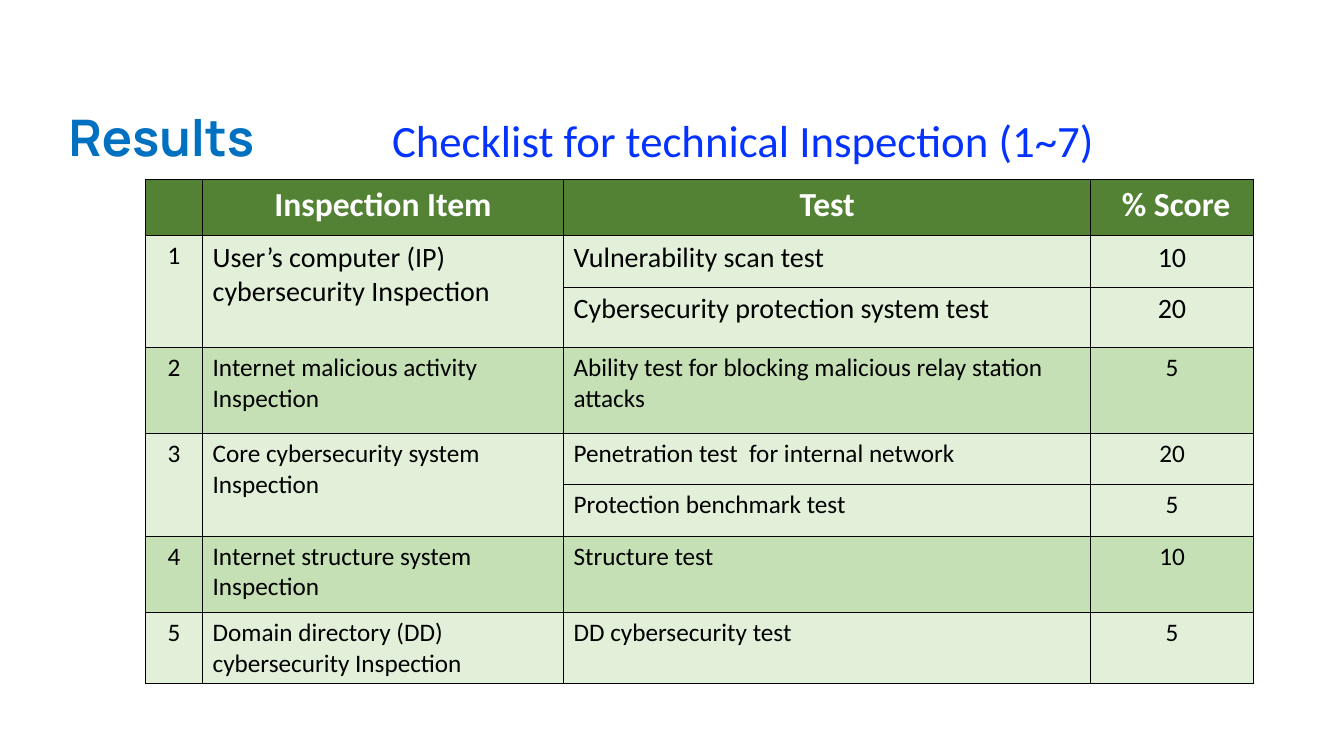
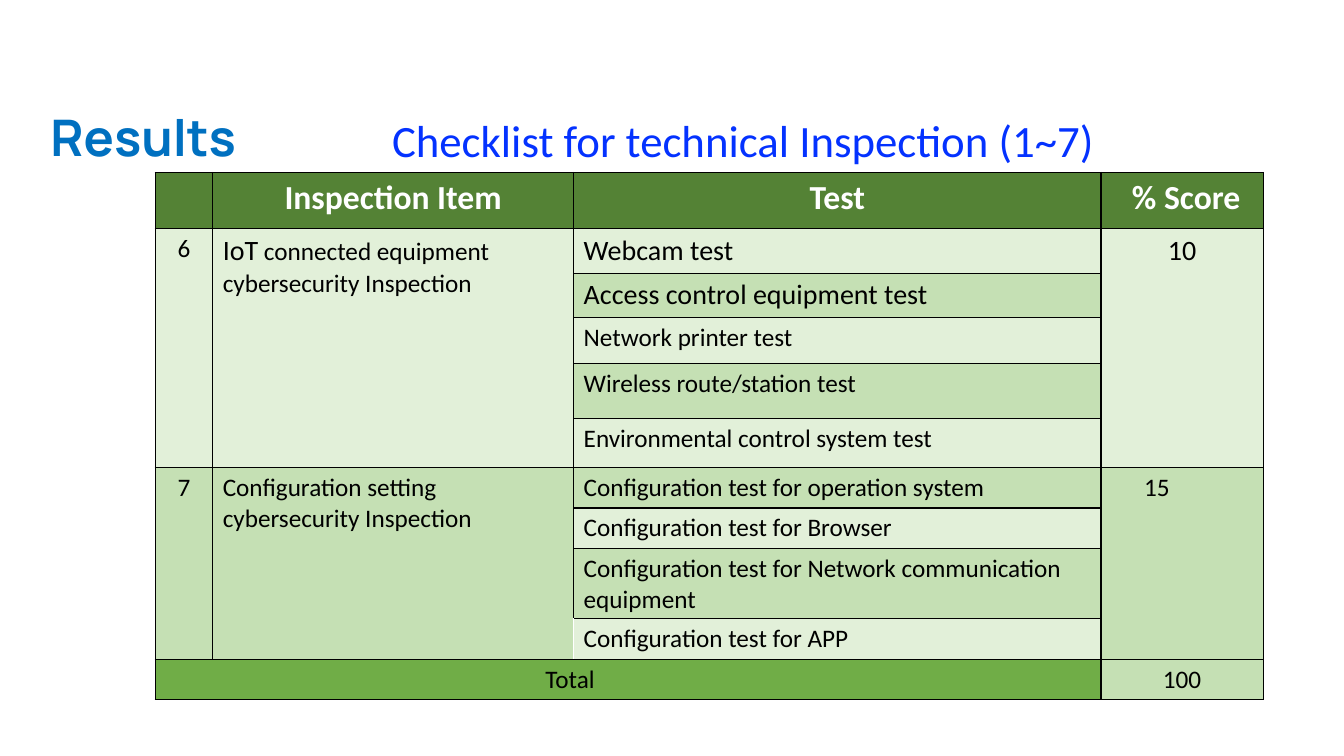
"""Build two slides that tabulate the technical inspection checklist and its scores."""
from lxml.etree import SubElement
from pptx import Presentation
from pptx.dml.color import RGBColor
from pptx.enum.text import MSO_ANCHOR, MSO_AUTO_SIZE, PP_ALIGN
from pptx.oxml.ns import qn
from pptx.util import Inches, Pt

BLACK = RGBColor(0x00, 0x00, 0x00)
WHITE = RGBColor(0xFF, 0xFF, 0xFF)
TITLE_BLUE = RGBColor(0x00, 0x70, 0xC0)
SUBTITLE_BLUE = RGBColor(0x04, 0x32, 0xFF)
HEADER_GREEN = RGBColor(0x54, 0x82, 0x35)
TOTAL_GREEN = RGBColor(0x70, 0xAD, 0x47)
PALE = RGBColor(0xE2, 0xF0, 0xD9)
MEDIUM = RGBColor(0xC5, 0xE0, 0xB4)

TITLE_FONT = {"name": "Manrope", "size": Pt(36), "bold": True}
SUBTITLE_FONT = {"name": "Calibri", "size": Pt(32), "bold": False}
HEADER_FONT = {"name": "Calibri", "size": Pt(24), "bold": True}
BODY_FONT = {"name": "Calibri", "size": Pt(18), "bold": False}
LARGE_FONT = {**BODY_FONT, "size": Pt(20)}

COLUMNS = [0.57, 3.58, 5.23, 1.61]
HEADER = ["", "Inspection Item", "Test", "% Score"]
SCORE_COLUMN = 3
CENTRED_COLUMNS = {0, SCORE_COLUMN}

CHECKLISTS = [
    {
        "title_place": (4.35, 14.27, 88.9, 13.33),
        "table_corner": (10.8, 23.73),
        "heights": [0.56, 0.51, 0.6, 0.85, 0.51, 0.51, 0.76, 0.7],
        "fills": [HEADER_GREEN, PALE, PALE, MEDIUM, PALE, PALE, MEDIUM, PALE],
        "rows": [
            HEADER,
            ["1", "User’s computer (IP) cybersecurity Inspection", "Vulnerability scan test", "10"],
            ["", "", "Cybersecurity protection system test", "20"],
            ["2", "Internet malicious activity Inspection",
             "Ability test for blocking malicious relay station attacks", "5"],
            ["3", "Core cybersecurity system Inspection", "Penetration test  for internal network", "20"],
            ["", "", "Protection benchmark test", "5"],
            ["4", "Internet structure system Inspection", "Structure test", "10"],
            ["5", "Domain directory (DD) cybersecurity Inspection", "DD cybersecurity test", "5"],
        ],
        "spans": [(1, 0, 2, 0), (1, 1, 2, 1), (4, 0, 5, 0), (4, 1, 5, 1)],
        "large": {(1, 1), (1, 2), (1, 3), (2, 2), (2, 3)},
        "large_starts": {},
        "cell_fills": {},
        "right_margins": {},
        "white_edges": {},
    },
    {
        "title_place": (3, 14.27, 36.68, 13.33),
        "table_corner": (11.55, 22.8),
        "heights": [0.56, 0.44, 0.44, 0.46, 0.54, 0.49, 0.4, 0.4, 0.7, 0.4, 0.4],
        "fills": [HEADER_GREEN] + [PALE, MEDIUM] * 5,
        "rows": [
            HEADER,
            ["6", "IoT connected equipment cybersecurity Inspection", "Webcam test", "10"],
            ["", "", "Access control equipment test", ""],
            ["", "", "Network printer test", ""],
            ["", "", "Wireless route/station test", ""],
            ["", "", "Environmental control system test", ""],
            ["7", "Configuration setting cybersecurity Inspection",
             "Configuration test for operation system", "15"],
            ["", "", "Configuration test for Browser", ""],
            ["", "", "Configuration test for Network communication equipment", ""],
            ["", "", "Configuration test for APP", ""],
            ["Total", "", "", "100"],
        ],
        "spans": [(first, column, last, column) for first, last in [(1, 5), (6, 9)] for column in (0, 1, 3)]
        + [(10, 0, 10, 2)],
        "large": {(1, 2), (1, 3), (2, 2)},
        "large_starts": {(1, 1): "IoT"},
        "cell_fills": {(10, 0): TOTAL_GREEN},
        "right_margins": {(6, 3): 0.6, (10, 0): 1.25},
        "white_edges": {(9, 1): "lnR", (9, 2): "lnL"},
    },
]


def add_run(paragraph, text, style, color):
    run = paragraph.add_run()
    run.text = text
    for name, value in style.items():
        setattr(run.font, name, value)
    run.font.color.rgb = color


def add_borders(cell, white_edge):
    properties = cell._tc.get_or_add_tcPr()
    for edge in ("lnL", "lnR", "lnT", "lnB"):
        line = SubElement(properties, qn(f"a:{edge}"), w=str(Pt(1)))
        fill = SubElement(line, qn("a:solidFill"))
        SubElement(fill, qn("a:srgbClr"), val=str(WHITE if edge == white_edge else BLACK))


presentation = Presentation()
presentation.slide_width = Inches(13.33)
presentation.slide_height = Inches(7.5)
percent_x = presentation.slide_width / 100
percent_y = presentation.slide_height / 100
title_only = presentation.slide_layouts[5]

for checklist in CHECKLISTS:
    slide = presentation.slides.add_slide(title_only)
    title = slide.shapes.title
    scales = (percent_x, percent_y, percent_x, percent_y)
    edges = ("left", "top", "width", "height")
    for edge, share, scale in zip(edges, checklist["title_place"], scales):
        setattr(title, edge, int(share * scale))
    frame_format = {"vertical_anchor": MSO_ANCHOR.TOP, "auto_size": MSO_AUTO_SIZE.NONE, "word_wrap": True}
    for name, value in frame_format.items():
        setattr(title.text_frame, name, value)
    paragraph = title.text_frame.paragraphs[0]
    paragraph.alignment = PP_ALIGN.LEFT
    paragraph.line_spacing = 0.9
    add_run(paragraph, "Results", TITLE_FONT, TITLE_BLUE)

    subtitle = slide.shapes.add_textbox(
        int(28.43 * percent_x), int(14.27 * percent_y), int(59.94 * percent_x), int(8.53 * percent_y))
    subtitle.text_frame.word_wrap = True
    add_run(subtitle.text_frame.paragraphs[0], "Checklist for technical Inspection (1~7)",
            SUBTITLE_FONT, SUBTITLE_BLUE)

    left, top = checklist["table_corner"]
    heights = checklist["heights"]
    table = slide.shapes.add_table(
        len(heights), len(COLUMNS), int(left * percent_x), int(top * percent_y),
        Inches(sum(COLUMNS)), Inches(sum(heights))).table
    table.first_row = False
    table.horz_banding = False
    for column, width in zip(table.columns, COLUMNS):
        column.width = Inches(width)
    for row, height in zip(table.rows, heights):
        row.height = Inches(height)
    for first_row, first_column, last_row, last_column in checklist["spans"]:
        table.cell(first_row, first_column).merge(table.cell(last_row, last_column))

    for row_index, texts in enumerate(checklist["rows"]):
        for column_index, text in enumerate(texts):
            place = (row_index, column_index)
            cell = table.cell(*place)
            add_borders(cell, checklist["white_edges"].get(place))
            cell.fill.solid()
            cell.fill.fore_color.rgb = checklist["cell_fills"].get(place, checklist["fills"][row_index])
            if not text:
                continue
            is_header = row_index == 0
            paragraph = cell.text_frame.paragraphs[0]
            centred = is_header or column_index in CENTRED_COLUMNS
            paragraph.alignment = PP_ALIGN.CENTER if centred else PP_ALIGN.LEFT
            if is_header and column_index == SCORE_COLUMN:
                cell.margin_left = Inches(0.18)
            if place in checklist["right_margins"]:
                cell.margin_right = Inches(checklist["right_margins"][place])
            large_start = checklist["large_starts"].get(place, "")
            if large_start:
                add_run(paragraph, large_start, LARGE_FONT, BLACK)
            body_style = LARGE_FONT if place in checklist["large"] else BODY_FONT
            add_run(paragraph, text.removeprefix(large_start),
                    HEADER_FONT if is_header else body_style, WHITE if is_header else BLACK)

presentation.save("out.pptx")
